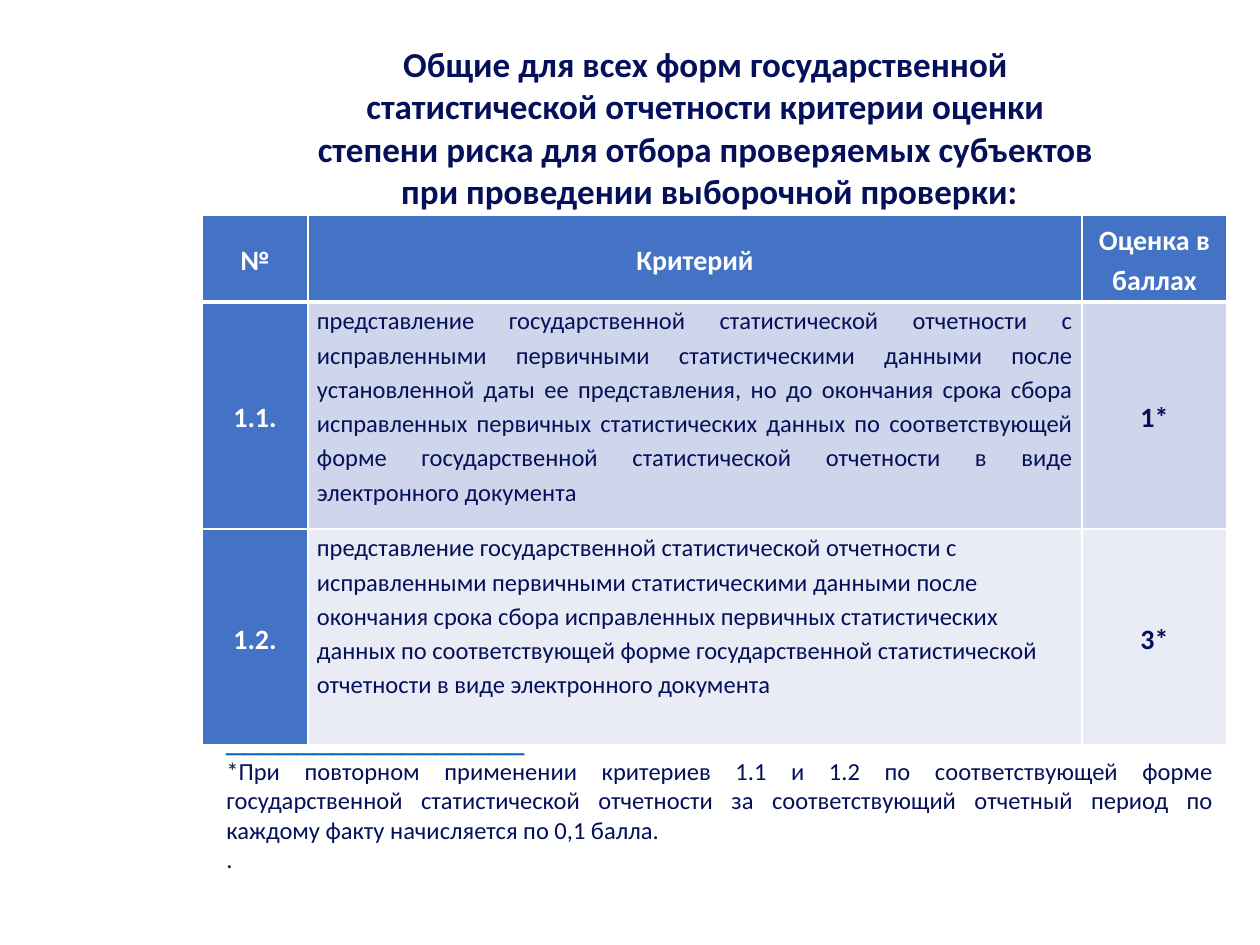
from lxml.etree import SubElement
from pptx import Presentation
from pptx.dml.color import RGBColor as Rgb
from pptx.enum.text import MSO_ANCHOR as Anchor, MSO_AUTO_SIZE as Fit, PP_ALIGN as Align
from pptx.oxml.ns import qn
from pptx.util import Emu, Pt

WHITE = Rgb(0xFF, 0xFF, 0xFF)
NAVY = Rgb(0x04, 0x10, 0x5A)
BLUE = Rgb(0x44, 0x72, 0xC4)
LINK = Rgb(0x05, 0x63, 0xC1)
PALE = Rgb(0xCF, 0xD5, 0xEA)
MIST = Rgb(0xE9, 0xEB, 0xF5)

TITLE = [
    "Общие для всех форм государственной ",
    "статистической отчетности критерии оценки ",
    "степени риска для отбора проверяемых субъектов ",
    "при проведении выборочной проверки:",
]
HEAD = ["№", "Критерий", "Оценка в баллах"]
RULES = [
    ("1.1.", "представление государственной статистической отчетности с исправленными "
     "первичными статистическими данными после установленной даты ее представления, "
     "но до окончания срока сбора исправленных первичных статистических данных по "
     "соответствующей форме государственной статистической отчетности в виде "
     "электронного документа", "1*", PALE, Align.JUSTIFY),
    ("1.2.", "представление государственной статистической отчетности с исправленными "
     "первичными статистическими данными после окончания срока сбора исправленных "
     "первичных статистических данных по соответствующей форме государственной "
     "статистической отчетности в виде электронного документа", "3*", MIST, Align.LEFT),
]
NOTE = ("*При повторном применении критериев 1.1 и 1.2 по соответствующей форме "
        "государственной статистической отчетности за соответствующий отчетный период "
        "по каждому факту начисляется по 0,1 балла.")


def px(num):
    """Turn pixels into EMU."""
    return Emu(round(num * 914400 / 126))


def write(para, words, size=16, color=NAVY, bold=False, face="Calibri",
          align=Align.CENTER, space=1.0, before=0, after=0):
    """Fill a paragraph with formatted text."""
    para.alignment, para.line_spacing = align, space
    para.space_before, para.space_after = Pt(before), Pt(after)
    run = para.add_run()
    run.text = words
    font = run.font
    font.name, font.size, font.bold = face, Pt(size), bold
    font.color.rgb = color


def add_title(slide, left, top, wide, high):
    """Place the four-line heading in the title placeholder."""
    title = slide.shapes.title
    title.left, title.top, title.width, title.height = map(px, (left, top, wide, high))
    frame = title.text_frame
    frame.word_wrap, frame.auto_size = True, Fit.NONE
    frame.vertical_anchor = Anchor.MIDDLE
    for num, line in enumerate(TITLE):
        para = frame.add_paragraph() if num else frame.paragraphs[0]
        write(para, line, size=20, bold=True)


def edge(cell, side, width):
    """Draw one white cell border."""
    line = SubElement(cell._tc.get_or_add_tcPr(), qn("a:ln" + side), w=str(Pt(width)))
    fill = SubElement(line, qn("a:solidFill"))
    SubElement(fill, qn("a:srgbClr"), val=str(WHITE))


def fill_cell(cell, row, words, fill, anchor=Anchor.MIDDLE, **form):
    """Set the borders, fill and text of a cell."""
    thick = {"T": 3 if row == 1 else 1, "B": 3 if row == 0 else 1}
    for side in "LRTB":
        edge(cell, side, thick.get(side, 1))
    cell.fill.solid()
    cell.fill.fore_color.rgb = fill
    cell.vertical_anchor = anchor
    cell.margin_left = cell.margin_right = px(9)
    cell.margin_top = cell.margin_bottom = 0
    write(cell.text_frame.paragraphs[0], words, space=1.15, **form)


def add_grid(slide, left, top, cols, rows):
    """Place the table of criteria and scores."""
    box = map(px, (left, top, sum(cols), sum(rows)))
    grid = slide.shapes.add_table(len(rows), len(cols), *box).table
    for col, wide in zip(grid.columns, cols):
        col.width = px(wide)
    for row, high in zip(grid.rows, rows):
        row.height = px(high)
    for col, words in enumerate(HEAD):
        gap = 3 if col == 1 else 0
        fill_cell(grid.cell(0, col), 0, words, BLUE, color=WHITE, bold=True,
                  before=gap, after=gap)
    for row, (code, rule, score, fill, align) in enumerate(RULES, 1):
        fill_cell(grid.cell(row, 0), row, code, BLUE, color=WHITE, bold=True)
        fill_cell(grid.cell(row, 1), row, rule, fill, anchor=Anchor.TOP,
                  size=14, align=align, before=3)
        fill_cell(grid.cell(row, 2), row, score, fill, bold=True)


def add_note(slide, left, top, wide, high):
    """Place the footnote under its rule."""
    frame = slide.shapes.add_textbox(*map(px, (left, top, wide, high))).text_frame
    frame.word_wrap = True
    write(frame.paragraphs[0], "_" * 17, size=18, color=LINK, face="Arial", align=Align.LEFT)
    write(frame.add_paragraph(), NOTE, size=14, align=Align.JUSTIFY)
    write(frame.add_paragraph(), ".", size=14, align=Align.LEFT)


def main():
    """Build and save the slide."""
    deck = Presentation()
    deck.slide_width, deck.slide_height = px(1260), px(945)
    slide = deck.slides.add_slide(deck.slide_layouts[5])
    add_title(slide, 186, 39, 1047, 176)
    add_grid(slide, 202, 215, [106, 774, 145], [87, 227, 216])
    add_note(slide, 214, 712, 1012, 170)
    deck.save("out.pptx")


if __name__ == "__main__":
    main()
